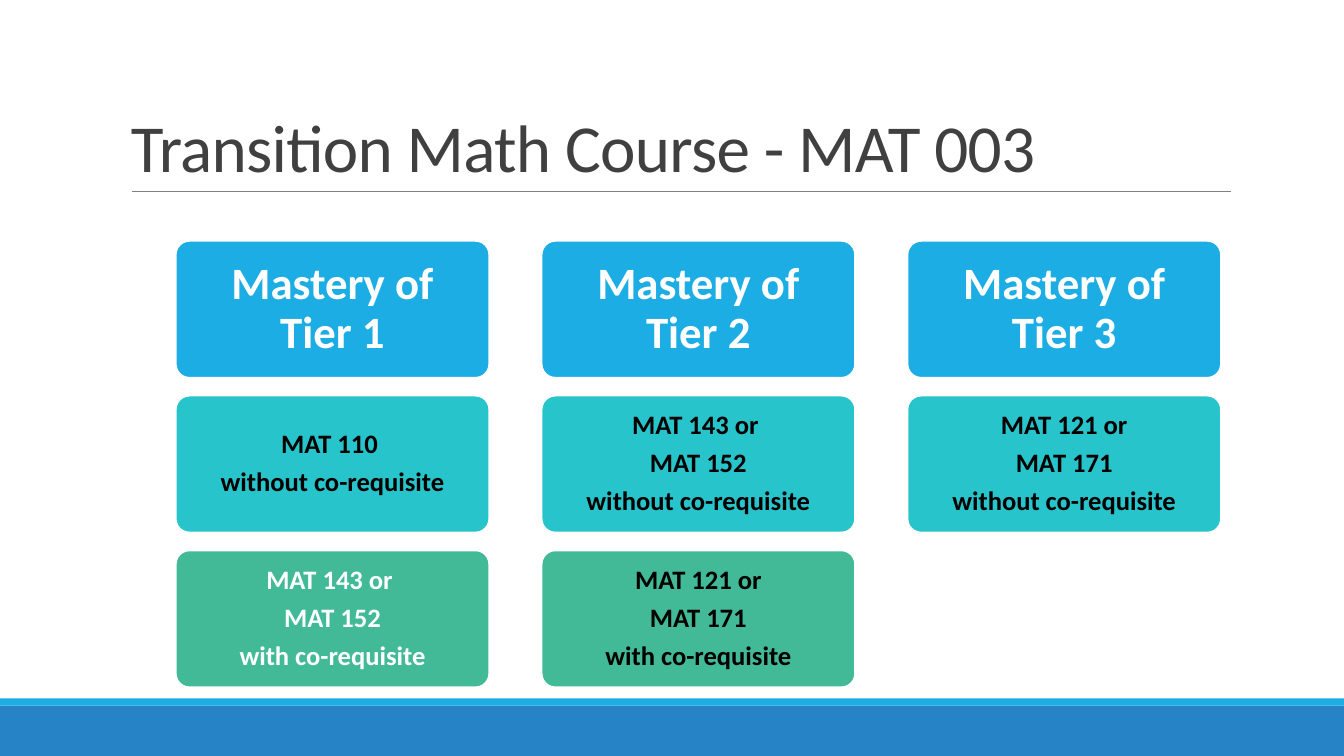
"""Build the Transition Math Course slide with its grid of tiers and courses."""
from lxml import etree
from pptx import Presentation
from pptx.dml.color import RGBColor
from pptx.enum.shapes import MSO_CONNECTOR, MSO_SHAPE
from pptx.enum.text import MSO_ANCHOR, PP_ALIGN
from pptx.oxml.ns import qn
from pptx.util import Cm, Pt

RECTANGLE, ROUNDED = MSO_SHAPE.RECTANGLE, MSO_SHAPE.ROUNDED_RECTANGLE
STRAIGHT = MSO_CONNECTOR.STRAIGHT
MIDDLE, BOTTOM = MSO_ANCHOR.MIDDLE, MSO_ANCHOR.BOTTOM
CENTER, LEFT = PP_ALIGN.CENTER, PP_ALIGN.LEFT

TITLE = "Transition Math Course - MAT 003"
WHITE, BLACK = "FFFFFF", "000000"
TIERS = [
    [
        (["Mastery of Tier 1"], WHITE),
        (["MAT 110 ", "without co-requisite"], BLACK),
        (["MAT 143 or ", "MAT 152", "with co-requisite"], WHITE),
    ],
    [
        (["Mastery of Tier 2"], WHITE),
        (["MAT 143 or ", "MAT 152", "without co-requisite"], BLACK),
        (["MAT 121 or", "MAT 171", "with co-requisite"], BLACK),
    ],
    [
        (["Mastery of Tier 3"], WHITE),
        (["MAT 121 or", "MAT 171", "without co-requisite"], BLACK),
    ],
]
COURSE = {"size": 19, "inset": 0.2, "after": 6.4}
ROWS = [
    {"fill": "1CADE4", "size": 32, "inset": 0.33, "after": 0},
    {"fill": "28C4CC", **COURSE},
    {"fill": "42BA97", **COURSE},
]
BANDS = [(17.78, 1.27, "2683C6"), (17.6, 0.18, "1CADE4")]

PAGE_WIDTH, PAGE_HEIGHT = 33.87, 19.05
GRID_LEFT, GRID_TOP = 4.43, 6.07
CARD_WIDTH, CARD_HEIGHT = 7.9, 3.45
COLUMN_STEP, ROW_STEP = 9.22, 3.9


def color(value):
    return RGBColor.from_string(value)


def set_all(target, values):
    for name, value in values.items():
        setattr(target, name, value)


def add_block(page, kind, left, top, width, height, fill):
    block = page.shapes.add_shape(kind, Cm(left), Cm(top), Cm(width), Cm(height))
    block.shadow.inherit = False
    block.fill.solid()
    block.fill.fore_color.rgb = color(fill)
    block.line.fill.background()
    return block


def write(box, lines, frame_format, para_format, font_format, ink):
    frame = box.text_frame
    set_all(frame, {"word_wrap": True, **frame_format})
    for index, line in enumerate(lines):
        para = frame.add_paragraph() if index else frame.paragraphs[0]
        set_all(para, para_format)
        span = para.add_run()
        span.text = line
        set_all(span.font, {"name": "Calibri", **font_format})
        span.font.color.rgb = color(ink)


def add_title(page):
    box = page.shapes.add_textbox(Cm(3.05), Cm(0.79), Cm(27.94), Cm(4.04))
    write(box, [TITLE], {"vertical_anchor": BOTTOM},
          {"alignment": LEFT, "line_spacing": 0.85}, {"size": Pt(48)}, "404040")
    span = box.text_frame.paragraphs[0].runs[0]
    span.font._element.set("spc", "-50")
    rule = page.shapes.add_connector(STRAIGHT, Cm(3.33), Cm(4.83), Cm(31.01), Cm(4.83))
    rule.line.width = Pt(0.5)
    rule.line.color.rgb = color("808080")
    etree.SubElement(rule._element.spPr, qn("a:effectLst"))


def add_card(page, column, row, lines, ink):
    style = ROWS[row]
    card = add_block(page, ROUNDED, GRID_LEFT + column * COLUMN_STEP,
                     GRID_TOP + row * ROW_STEP, CARD_WIDTH, CARD_HEIGHT, style["fill"])
    card.adjustments[0] = 0.1
    card.line.width = Pt(1.25)
    card.line.color.rgb = color(WHITE)
    sides = ("left", "top", "right", "bottom")
    frame_format = {f"margin_{side}": Cm(style["inset"]) for side in sides}
    frame_format["vertical_anchor"] = MIDDLE
    para_format = {"alignment": CENTER, "line_spacing": 0.9,
                   "space_after": Pt(style["after"])}
    write(card, lines, frame_format, para_format,
          {"size": Pt(style["size"]), "bold": True}, ink)


def main():
    deck = Presentation()
    set_all(deck, {"slide_width": Cm(PAGE_WIDTH), "slide_height": Cm(PAGE_HEIGHT)})
    page = deck.slides.add_slide(deck.slide_layouts[6])
    for top, height, fill in BANDS:
        add_block(page, RECTANGLE, 0, top, PAGE_WIDTH, height, fill)
    add_title(page)
    for column, cards in enumerate(TIERS):
        for row, (lines, ink) in enumerate(cards):
            add_card(page, column, row, lines, ink)
    deck.save("out.pptx")


if __name__ == "__main__":
    main()
